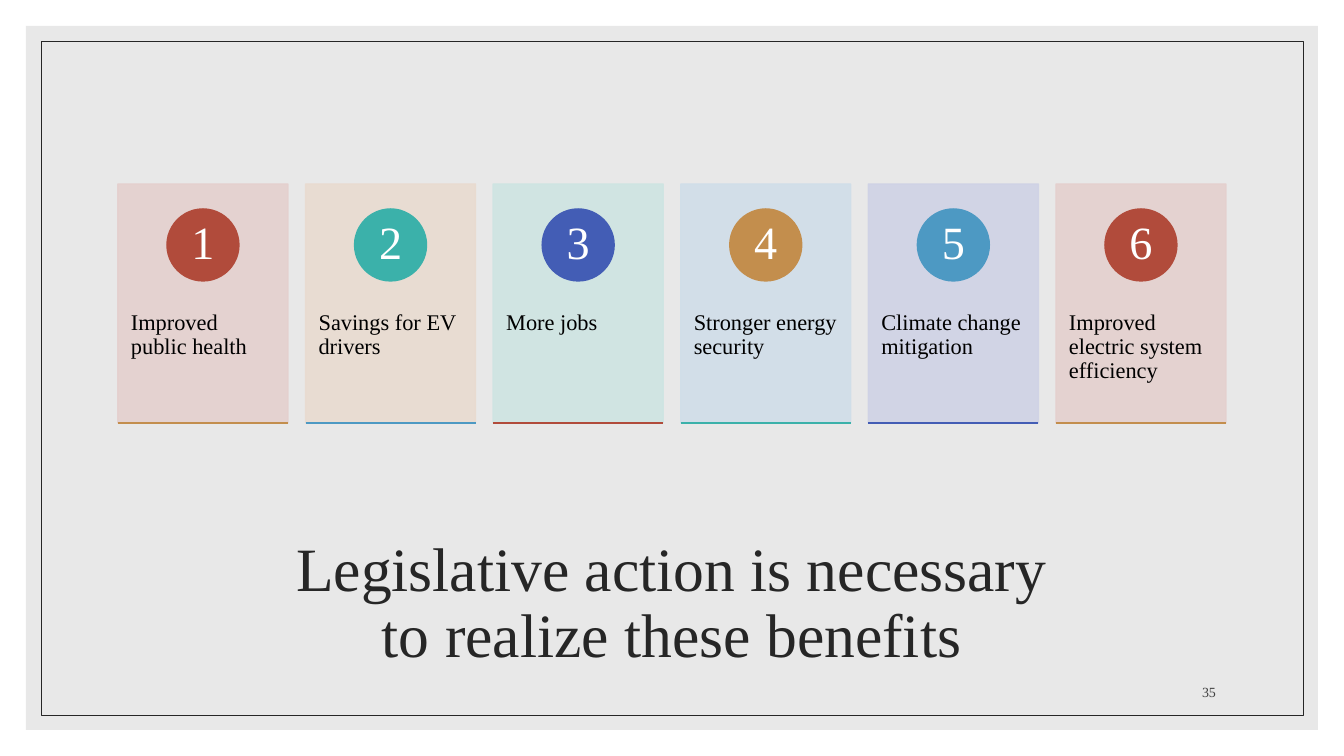
from lxml import etree
from pptx import Presentation
from pptx.dml.color import RGBColor
from pptx.enum.shapes import MSO_CONNECTOR, MSO_SHAPE
from pptx.enum.text import MSO_ANCHOR, MSO_AUTO_SIZE, PP_ALIGN
from pptx.oxml.ns import qn
from pptx.util import Pt

RECTANGLE, OVAL = MSO_SHAPE.RECTANGLE, MSO_SHAPE.OVAL
STRAIGHT = MSO_CONNECTOR.STRAIGHT
TOP, MIDDLE, BOTTOM = MSO_ANCHOR.TOP, MSO_ANCHOR.MIDDLE, MSO_ANCHOR.BOTTOM
LEFT, CENTER, RIGHT = PP_ALIGN.LEFT, PP_ALIGN.CENTER, PP_ALIGN.RIGHT

FONT = "Times New Roman"
WHITE = RGBColor(0xFF, 0xFF, 0xFF)
BLACK = RGBColor(0x00, 0x00, 0x00)
PANEL_GREY = RGBColor(0xD9, 0xD9, 0xD9)
DARK = RGBColor(0x26, 0x26, 0x26)
NUMBER_GREY = RGBColor(0x40, 0x40, 0x40)
RED = RGBColor(0xB1, 0x4B, 0x3B)
OCHRE = RGBColor(0xC3, 0x8E, 0x4D)
TEAL = RGBColor(0x3B, 0xB1, 0xAA)
SKY = RGBColor(0x4D, 0x99, 0xC3)
INDIGO = RGBColor(0x43, 0x5D, 0xB5)
PALE_RED = RGBColor(0xE4, 0xD0, 0xCE)
PALE_OCHRE = RGBColor(0xE9, 0xDB, 0xD0)
PALE_TEAL = RGBColor(0xCE, 0xE4, 0xE2)
PALE_SKY = RGBColor(0xD0, 0xDE, 0xE9)
PALE_INDIGO = RGBColor(0xCF, 0xD2, 0xE5)

# Content: benefit, card colour, badge colour, underline colour
TITLE = "Legislative action is necessary\vto realize these benefits"
PAGE_NUMBER = "35"
BENEFITS = [
    ("Improved public health", PALE_RED, RED, OCHRE),
    ("Savings for EV drivers", PALE_OCHRE, TEAL, SKY),
    ("More jobs", PALE_TEAL, INDIGO, RED),
    ("Stronger energy security", PALE_SKY, OCHRE, TEAL),
    ("Climate change mitigation", PALE_INDIGO, SKY, INDIGO),
    ("Improved electric system efficiency", PALE_RED, RED, OCHRE),
]

# Layout in px
SLIDE_WIDTH, SLIDE_HEIGHT = 1344, 756
PANEL_MARGIN, FRAME_MARGIN = 26, 41
ROW_LEFT, ROW_WIDTH = 118, 1108
CARD_TOP, CARD_WIDTH, CARD_HEIGHT = 184, 170, 239
LABEL_TOP, LABEL_HEIGHT = 275, 143
BADGE_TOP, BADGE_SIZE, NUMBER_SIZE = 209, 72, 50
EMU_PER_PX = 914400 / 100.8


def px(*lengths):
    return [round(length * EMU_PER_PX) for length in lengths]


def set_alpha(fill, percent):
    color = fill._xPr.find(qn("a:solidFill"))[0]
    etree.SubElement(color, qn("a:alpha")).set("val", str(percent * 1000))


def add_box(shapes, kind, box, fill=None, line=None, width=1, opacity=100):
    shape = shapes.add_shape(kind, *px(*box))
    shape.shadow.inherit = False
    for paint, color in ((shape.fill, fill), (shape.line.fill, line)):
        if color is None:
            paint.background()
            continue
        paint.solid()
        paint.fore_color.rgb = color
        if opacity < 100:
            set_alpha(paint, opacity)
    if line is not None:
        shape.line.width = Pt(width)
    return shape


def write(shape, text, size, color, align=LEFT, anchor=TOP, insets=(10, 5), spacing=0.9):
    text_frame = shape.text_frame
    text_frame.text = text
    text_frame.word_wrap = True
    text_frame.auto_size = MSO_AUTO_SIZE.NONE
    text_frame.vertical_anchor = anchor
    side, end = px(*insets)
    text_frame.margin_left = text_frame.margin_right = side
    text_frame.margin_top = text_frame.margin_bottom = end
    paragraph = text_frame.paragraphs[0]
    paragraph.alignment = align
    paragraph.line_spacing = spacing
    for run in paragraph.runs:
        run.font.name = FONT
        run.font.size = Pt(size)
        run.font.color.rgb = color


def inset_box(margin):
    return margin, margin, SLIDE_WIDTH - 2 * margin, SLIDE_HEIGHT - 2 * margin


def add_card(shapes, number, left, benefit, card_color, badge_color, line_color):
    add_box(shapes, RECTANGLE, (left, CARD_TOP, CARD_WIDTH, CARD_HEIGHT),
            card_color, card_color, opacity=90)
    label = shapes.add_textbox(*px(left, LABEL_TOP, CARD_WIDTH, LABEL_HEIGHT))
    write(label, benefit, 16, BLACK, insets=(13, 36))

    # Numbered badge
    badge_left = left + (CARD_WIDTH - BADGE_SIZE) / 2
    add_box(shapes, OVAL, (badge_left, BADGE_TOP, BADGE_SIZE, BADGE_SIZE),
            badge_color, badge_color)
    inset = (BADGE_SIZE - NUMBER_SIZE) / 2
    digit = shapes.add_textbox(
        *px(badge_left + inset, BADGE_TOP + inset, NUMBER_SIZE, NUMBER_SIZE))
    write(digit, str(number), 33, WHITE, CENTER, MIDDLE, (6, 1))

    # Underline along the card's bottom edge
    bottom = CARD_TOP + CARD_HEIGHT
    underline = shapes.add_connector(
        STRAIGHT, *px(left, bottom, left + CARD_WIDTH, bottom))
    underline.line.color.rgb = line_color
    underline.line.width = Pt(1)
    etree.SubElement(underline._element.spPr, qn("a:effectLst"))


def main():
    presentation = Presentation()
    presentation.slide_width, presentation.slide_height = px(SLIDE_WIDTH, SLIDE_HEIGHT)
    slide = presentation.slides.add_slide(presentation.slide_layouts[5])
    title = slide.shapes.title

    # Backdrop, grey panel and thin frame
    add_box(slide.shapes, RECTANGLE, inset_box(0), WHITE)
    add_box(slide.shapes, RECTANGLE, inset_box(PANEL_MARGIN), PANEL_GREY, opacity=60)
    add_box(slide.shapes, RECTANGLE, inset_box(FRAME_MARGIN), line=DARK, width=0.5)

    # Title, moved in front of the backdrop
    slide.shapes._spTree.append(title._element)
    title.left, title.top, title.width, title.height = px(ROW_LEFT, 529, ROW_WIDTH, 151)
    write(title, TITLE, 44, DARK, CENTER, MIDDLE)

    # Row of benefit cards
    cards = slide.shapes.add_group_shape()
    pitch = (ROW_WIDTH - CARD_WIDTH) / (len(BENEFITS) - 1)
    for index, benefit in enumerate(BENEFITS):
        add_card(cards.shapes, index + 1, ROW_LEFT + index * pitch, *benefit)

    # Page number
    page_number = slide.shapes.add_textbox(*px(1134, 665, 92, 40))
    write(page_number, PAGE_NUMBER, 10, NUMBER_GREY, RIGHT, BOTTOM, spacing=1.0)

    presentation.save("out.pptx")


if __name__ == "__main__":
    main()
